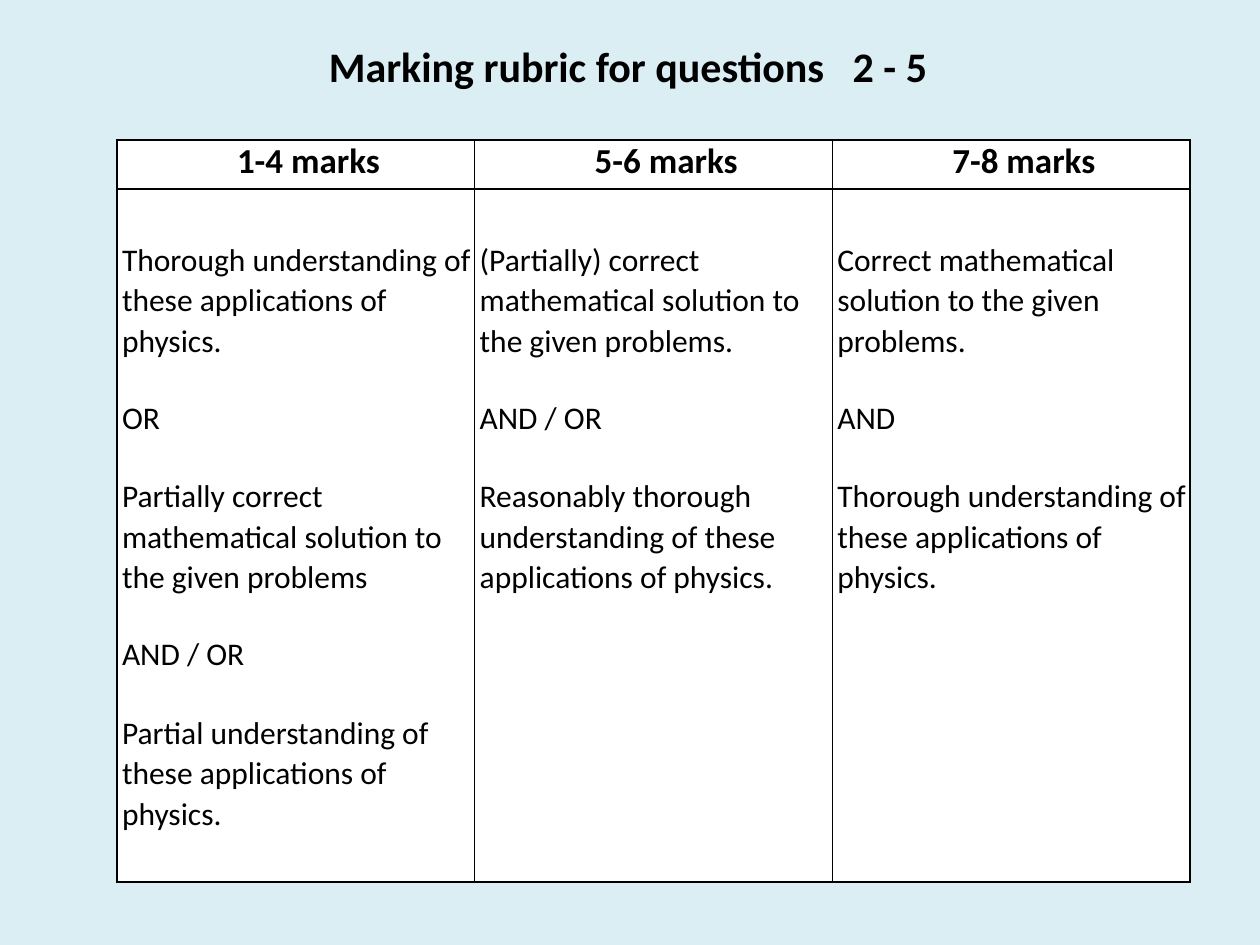
from pptx import Presentation
from pptx.dml.color import RGBColor
from pptx.enum.text import MSO_AUTO_SIZE as AutoSize, PP_ALIGN as Align
from pptx.oxml import parse_xml
from pptx.oxml.ns import nsdecls
from pptx.util import Cm, Pt

RUBRIC = {
    "1-4 marks": [
        "Thorough understanding of these applications of physics.",
        "OR",
        "Partially correct mathematical solution to the given problems",
        "AND / OR",
        "Partial understanding of these applications of physics.",
    ],
    "5-6 marks": [
        "(Partially) correct mathematical solution to the given problems.",
        "AND / OR",
        "Reasonably thorough understanding of these applications of physics.",
    ],
    "7-8 marks": [
        "Correct mathematical solution to the given problems.",
        "AND",
        "Thorough understanding of these applications of physics.",
    ],
}


def color(value):
    return RGBColor.from_string(value)


class RubricSlide:
    """Hold the style and the slide, and draw the title and the marking table."""

    font = "Calibri"
    ink = "000000"
    paper = "FFFFFF"
    backdrop = "DBEEF4"

    def __init__(self, presentation):
        self.slide = presentation.slides.add_slide(presentation.slide_layouts[6])
        background = self.slide.background.fill
        background.solid()
        background.fore_color.rgb = color(self.backdrop)

    def run(self, paragraph, text, size, bold=False):
        run = paragraph.add_run()
        run.text = text
        run.font.name = self.font
        run.font.size = Pt(size)
        run.font.bold = bold
        run.font.color.rgb = color(self.ink)

    def title(self, text, left, top, width, height):
        shape = self.slide.shapes.add_textbox(Cm(left), Cm(top), Cm(width), Cm(height))
        frame = shape.text_frame
        frame.word_wrap = False
        frame.auto_size = AutoSize.SHAPE_TO_FIT_TEXT
        self.run(frame.paragraphs[0], text, 24, bold=True)

    def cell(self, cell, indent, top):
        cell.margin_left, cell.margin_top = Cm(indent), Cm(top)
        cell.margin_right = cell.margin_bottom = 0
        properties = cell._tc.get_or_add_tcPr()
        for side in "LRTB":
            properties.append(parse_xml(
                f'<a:ln{side} {nsdecls("a")} w="{Pt(1)}"><a:solidFill>'
                f'<a:srgbClr val="{self.ink}"/></a:solidFill></a:ln{side}>'))
        cell.fill.solid()
        cell.fill.fore_color.rgb = color(self.paper)

    def header(self, cell, text):
        self.cell(cell, indent=0.51, top=0)
        paragraph = cell.text_frame.paragraphs[0]
        paragraph.alignment = Align.CENTER
        self.run(paragraph, text, 20, bold=True)

    def criteria(self, cell, lines):
        self.cell(cell, indent=0.1, top=1.02)
        frame = cell.text_frame
        for index, line in enumerate(lines):
            paragraph = frame.add_paragraph() if index else frame.paragraphs[0]
            paragraph.space_before = Pt(22 if index else 0)
            paragraph.line_spacing = 1.0 if line.isupper() else 1.05
            self.run(paragraph, line, 18)

    def table(self, rubric, left, top, width, row_heights):
        table = self.slide.shapes.add_table(
            len(row_heights), len(rubric),
            Cm(left), Cm(top), Cm(width), Cm(sum(row_heights))).table
        table.first_row = table.horz_banding = False
        for row, height in zip(table.rows, row_heights):
            row.height = Cm(height)
        for index, (marks, lines) in enumerate(rubric.items()):
            self.header(table.cell(0, index), marks)
            self.criteria(table.cell(1, index), lines)


def main():
    presentation = Presentation()
    presentation.slide_width, presentation.slide_height = Cm(25.4), Cm(19.05)
    rubric_slide = RubricSlide(presentation)
    rubric_slide.table(RUBRIC, 2.36, 2.82, 21.63, [0.99, 13.97])
    rubric_slide.title("Marking rubric for questions   2 - 5", 6.38, 0.69, 12.67, 1.27)
    presentation.save("out.pptx")


if __name__ == "__main__":
    main()
